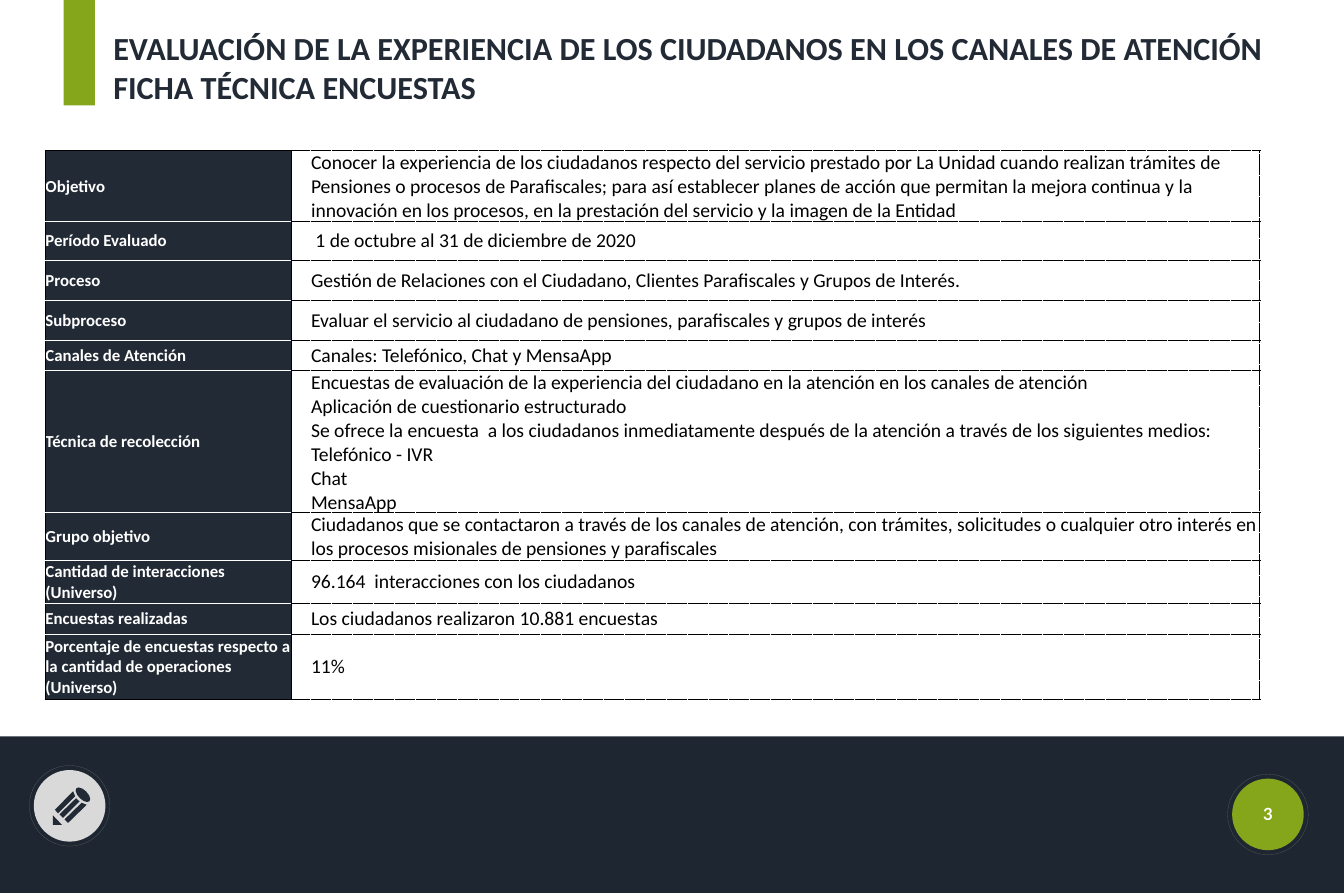
from lxml import etree
from pptx import Presentation
from pptx import util as u
from pptx.dml.color import RGBColor
from pptx.enum import dml, shapes, text
from pptx.oxml.ns import qn

NAVY, DARK, GREEN = "222A35", "1E2731", "85A61A"
GREY, RING, WHITE, BLACK = "D9D9D9", "666666", "FFFFFF", "000000"
BODY_FONT, NUMBER_FONT = "Calibri", "Lato"


def color(value):
    return RGBColor.from_string(value)


class SlideBuilder:
    """Draws on a grid of 100 columns by 100 rows."""

    def __init__(self, presentation):
        self.slide = presentation.slides.add_slide(presentation.slide_layouts[6])
        self.column = presentation.slide_width / 100
        self.row = presentation.slide_height / 100

    def box(self, left, top, width, height):
        return (round(left * self.column), round(top * self.row),
                round(width * self.column), round(height * self.row))

    def paint(self, shape, fill=None, line=None):
        shape.shadow.inherit = False
        if fill:
            shape.fill.solid()
            shape.fill.fore_color.rgb = color(fill)
        else:
            shape.fill.background()
        if line:
            shape.line.color.rgb = color(line)
            shape.line.width = u.Pt(0.25)
            shape.line.dash_style = dml.MSO_LINE.SQUARE_DOT
        else:
            shape.line.fill.background()
        return shape

    def rectangle(self, left, top, width, height, fill):
        shape = self.slide.shapes.add_shape(
            shapes.MSO_SHAPE.RECTANGLE, *self.box(left, top, width, height))
        return self.paint(shape, fill)

    def ellipse(self, center_x, center_y, width, height, fill=None, line=None):
        """Width and height are both counted in columns."""
        wide, high = round(width * self.column), round(height * self.column)
        shape = self.slide.shapes.add_shape(
            shapes.MSO_SHAPE.OVAL,
            round(center_x * self.column - wide / 2),
            round(center_y * self.row - high / 2), wide, high)
        return self.paint(shape, fill, line)

    def badge(self, center_x, center_y, fill):
        self.ellipse(center_x, center_y, 5.33, 5.33, fill)
        self.ellipse(center_x, center_y, 6, 6, line=RING)

    def outline(self, left, top, contours, fill):
        """Contour points are in hundredths of an inch."""
        builder = None
        for first, *others in contours:
            if builder is None:
                builder = self.slide.shapes.build_freeform(*first, scale=u.Inches(0.01))
            else:
                builder.move_to(*first)
            builder.add_line_segments(others, close=True)
        shape = builder.convert_to_shape(*self.box(left, top, 0, 0)[:2])
        return self.paint(shape, fill)

    def format_text(self, text_frame, size, font, fill, bold, align=None, indent=0):
        for paragraph in text_frame.paragraphs:
            paragraph.alignment = align
            if indent:
                properties = paragraph._p.get_or_add_pPr()
                properties.set("marL", str(u.Inches(indent)))
                properties.set("indent", "0")
            for run in paragraph.runs:
                run.font.size = u.Pt(size)
                run.font.name = font
                run.font.bold = bold
                run.font.color.rgb = color(fill)

    def text_box(self, left, top, width, height, words, size, font, fill,
                 align=None, wrap=True):
        shape = self.slide.shapes.add_textbox(*self.box(left, top, width, height))
        text_frame = shape.text_frame
        text_frame.word_wrap = wrap
        text_frame.text = words
        self.format_text(text_frame, size, font, fill, True, align)
        return text_frame

    def border(self, cell, side, fill, dash):
        line = etree.SubElement(cell._tc.get_or_add_tcPr(), qn("a:ln" + side),
                                w=str(u.Pt(1)))
        solid = etree.SubElement(line, qn("a:solidFill"))
        etree.SubElement(solid, qn("a:srgbClr"), val=fill)
        etree.SubElement(line, qn("a:prstDash"), val=dash)

    def cell(self, cell, words, size, fill, ink, borders, bold=False, indent=0):
        cell.text_frame.text = words
        self.format_text(cell.text_frame, size, BODY_FONT, ink, bold, indent=indent)
        cell.vertical_anchor = text.MSO_ANCHOR.MIDDLE
        cell.margin_left = cell.margin_right = cell.margin_top = u.Inches(0.01)
        cell.margin_bottom = 0
        for side, (line, dash) in borders.items():
            self.border(cell, side, line, dash)
        cell.fill.solid()
        cell.fill.fore_color.rgb = color(fill)

    def fact_table(self, left, top, widths, rows):
        heights = [height for height, _, _ in rows]
        frame = self.slide.shapes.add_table(
            len(rows), len(widths), *self.box(left, top, sum(widths), sum(heights)))
        table = frame.table
        table.first_row = table.horz_banding = False
        for column, width in zip(table.columns, widths):
            column.width = round(width * self.column)
        solid, dotted = (BLACK, "solid"), (BLACK, "dot")
        inner = (WHITE, "solid")
        last = len(rows) - 1
        for index, (height, label, value) in enumerate(rows):
            table.rows[index].height = round(height * self.row)
            label_borders = {"L": solid, "R": solid,
                             "T": inner if index else solid,
                             "B": inner if index < last else solid}
            value_borders = {"L": solid, "R": dotted, "T": dotted, "B": dotted}
            self.cell(table.cell(index, 0), label, 24, NAVY, WHITE,
                      label_borders, bold=True)
            self.cell(table.cell(index, 1), value, 28, WHITE, BLACK,
                      value_borders, indent=0.39)


FACTS = [
    (7.39, "Objetivo",
     "Conocer la experiencia de los ciudadanos respecto del servicio prestado por La Unidad "
     "cuando realizan trámites de Pensiones o procesos de Parafiscales; para así establecer "
     "planes de acción que permitan la mejora continua y la innovación en los procesos, en la "
     "prestación del servicio y la imagen de la Entidad"),
    (4.29, "Período Evaluado", " 1 de octubre al 31 de diciembre de 2020"),
    (4.51, "Proceso",
     "Gestión de Relaciones con el Ciudadano, Clientes Parafiscales y Grupos de Interés."),
    (4.51, "Subproceso",
     "Evaluar el servicio al ciudadano de pensiones, parafiscales y grupos de interés"),
    (3.33, "Canales de Atención", "Canales: Telefónico, Chat y MensaApp"),
    (14.39, "Técnica de recolección",
     "Encuestas de evaluación de la experiencia del ciudadano en la atención en los canales "
     "de atención\n"
     "Aplicación de cuestionario estructurado\v"
     "Se ofrece la encuesta  a los ciudadanos inmediatamente después de la atención a través "
     "de los siguientes medios:\n"
     "Telefónico - IVR\nChat\nMensaApp"),
    (5.42, "Grupo objetivo",
     "Ciudadanos que se contactaron a través de los canales de atención, con trámites, "
     "solicitudes o cualquier otro interés en los procesos misionales de pensiones y "
     "parafiscales"),
    (4.85, "Cantidad de interacciones (Universo)", "96.164  interacciones con los ciudadanos"),
    (3.44, "Encuestas realizadas", "Los ciudadanos realizaron 10.881 encuestas"),
    (7.22, "Porcentaje de encuestas respecto a la cantidad de operaciones (Universo)", "11%"),
]

PENCIL = [
    [(0, 57), (18, 76), (0, 76)],
    [(57, 32), (23, 65), (30, 72), (67, 36)],
    [(50, 27), (46, 23), (13, 55), (20, 62), (53, 29)],
    [(40, 9), (4, 46), (10, 53), (44, 19)],
]


def main():
    presentation = Presentation()
    presentation.slide_width = u.Inches(26.66)
    presentation.slide_height = u.Inches(17.72)
    builder = SlideBuilder(presentation)

    # Footer band with the pencil badge
    builder.rectangle(0, 82.45, 100, 17.55, DARK)
    builder.badge(5.18, 90.24, GREY)
    builder.outline(3.94, 88.09, PENCIL, NAVY)
    builder.ellipse(6.17, 89, 1.38, 0.68, NAVY).rotation = 45

    # Page number badge
    builder.badge(94.34, 91.2, GREEN)
    number = builder.text_box(91.97, 89.45, 4.73, 3.44, "3", 24, NUMBER_FONT, WHITE,
                              text.PP_ALIGN.CENTER)
    number.margin_left = number.margin_right = u.Inches(0.2)
    number.margin_top = number.margin_bottom = u.Inches(0.1)

    # Survey fact sheet
    builder.fact_table(3.34, 16.87, [18.3, 72.09], FACTS)

    # Title with its accent bar
    builder.rectangle(4.73, 0, 2.33, 11.79, GREEN)
    title = builder.text_box(
        8.06, 2.88, 87.85, 9.31,
        "EVALUACIÓN DE LA EXPERIENCIA DE LOS CIUDADANOS EN LOS CANALES DE ATENCIÓN\n"
        "FICHA TÉCNICA ENCUESTAS", 46, BODY_FONT, NAVY, wrap=False)
    title.auto_size = text.MSO_AUTO_SIZE.SHAPE_TO_FIT_TEXT

    presentation.save("out.pptx")


if __name__ == "__main__":
    main()
